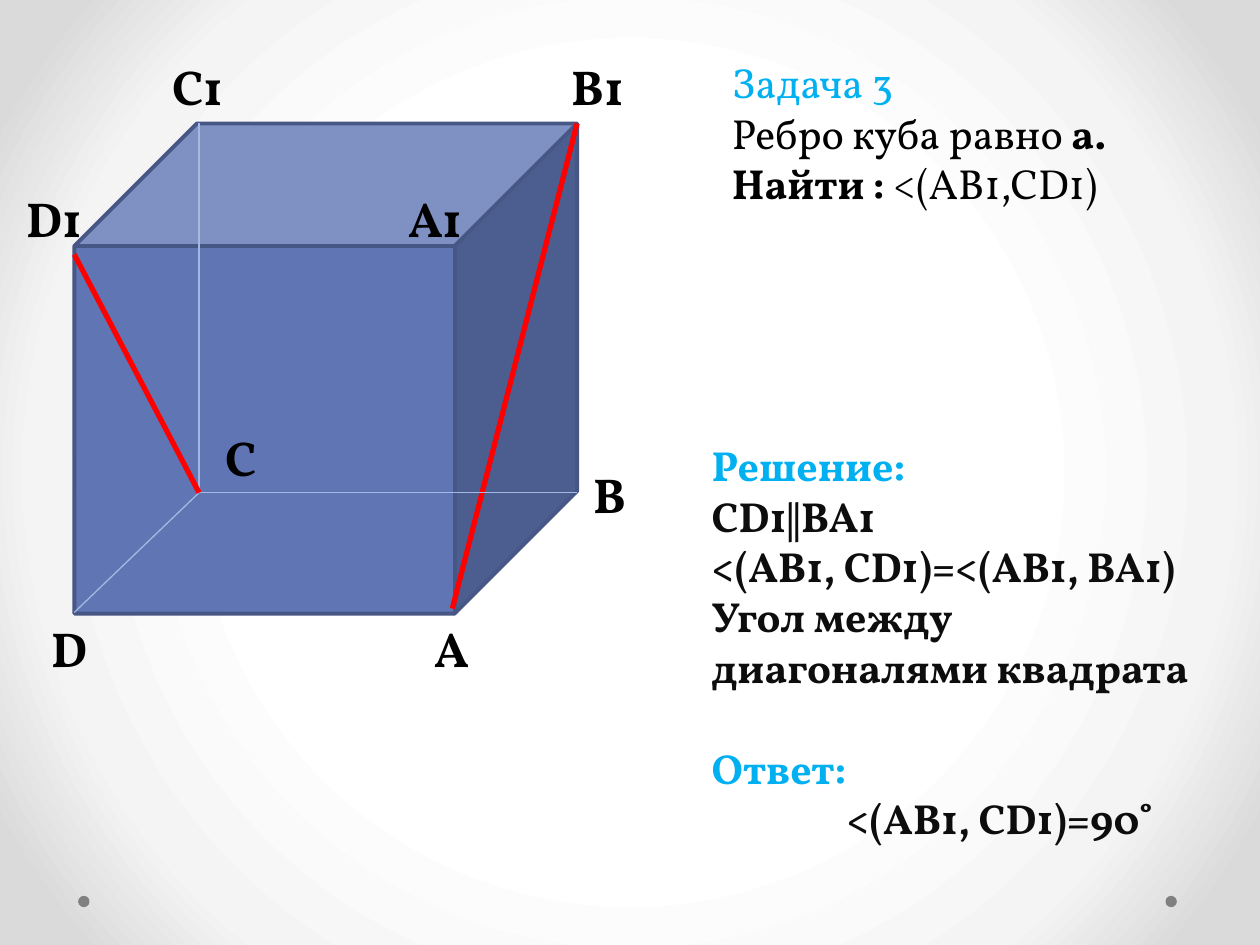
import pptx
import pptx.util
import pptx.dml.color
import pptx.enum.shapes
import pptx.enum.text
import pptx.oxml
import pptx.oxml.ns

THEME = dict(font="Vollkorn", label=28, body=24, black="000000", ink="0D0D0D",
             accent="00B0F0", cube="6076B4", edge="475785", hidden="A0BAE1",
             diagonal="FF0000", dot="808080", thin=0.75, outline=2.25, thick=3,
             stops=[(50, "FFFFFF"), (76, "F4F4F4"), (92, "DADADA")])
COLS, ROWS = 100, 75
CUBE = (5.9, 9.8, 39.9, 38.9)
DOTS = [(6.2, 71.1), (92.5, 71.1)]
DOT_SIZE = 0.9
LABEL_H = 5.7
TOP, UPPER, BOTTOM = 4, 14.5, 48.6
LABELS = [("A", 33.5, BOTTOM, 5.5), ("A1", 31.4, UPPER, 9),
          ("B", 46.1, 36.4, 4.7), ("B1", 44.4, TOP, 8.1),
          ("C", 16.9, 33.4, 5.5), ("C1", 12.7, TOP, 6.8),
          ("D", 3.1, BOTTOM, 5.5), ("D1", 1.1, UPPER, 7.5)]
POINTS = {"A": (35.9, 48.3), "B": (45.8, 39.1), "B1": (45.8, 9.8),
          "C": (15.8, 39.1), "C1": (15.8, 9.8), "D": (5.9, 48.6), "D1": (5.9, 20.2)}
LINES = [("B1", "A", "diagonal", "thick"), ("C1", "C", "hidden", "thin"),
         ("B", "C", "hidden", "thin"), ("C", "D", "hidden", "thin"),
         ("C", "D1", "diagonal", "thick")]
TASK = [
    dict(runs=[("Задача 3", "accent", False)]),
    dict(runs=[("Ребро куба равно ", "black", False), ("а.", "black", True)]),
    dict(runs=[("Найти :", "black", True), (" <(АВ1,СD1)", "black", False)]),
]
SOLUTION = [
    dict(runs=[("Решение:", "accent", True)]),
    dict(runs=[("CD1‖BA1", "ink", True)]),
    dict(runs=[("<(AB1, CD1)=<(AB1, BA1)", "ink", True)]),
    dict(runs=[("Угол между диагоналями квадрата", "ink", True)]),
    dict(runs=[("Ответ:", "accent", True)], before=28.8),
    dict(runs=[("<(AB1, CD1)=90˚", "ink", True)], indent=10.7),
]

prs = pptx.Presentation()
prs.slide_width, prs.slide_height = pptx.util.Inches(10), pptx.util.Inches(7.5)
s = prs.slides.add_slide(prs.slide_layouts[6])


def grid(*cells):
    sides = ((prs.slide_width, COLS), (prs.slide_height, ROWS))
    return [round(c * sides[i % 2][0] / sides[i % 2][1]) for i, c in enumerate(cells)]


def rgb(name):
    return pptx.dml.color.RGBColor.from_string(THEME[name])


def assign(target, values):
    for name, value in values.items():
        setattr(target, name, value)


def add_background():
    s.background.fill.gradient()
    old = s.background.fill._xPr.find(pptx.oxml.ns.qn("a:gradFill"))
    stops = "".join(f'<a:gs pos="{pos * 1000}"><a:srgbClr val="{color}"/></a:gs>'
                    for pos, color in THEME["stops"])
    new = pptx.oxml.parse_xml(
        f'<a:gradFill {pptx.oxml.ns.nsdecls("a")} rotWithShape="1"><a:gsLst>{stops}</a:gsLst>'
        '<a:path path="circle"><a:fillToRect l="50000" t="50000" r="50000" b="50000"/>'
        '</a:path></a:gradFill>')
    old.getparent().replace(old, new)


def add_solid(kind, box, fill, edge=None):
    sp = s.shapes.add_shape(kind, *grid(*box))
    sp.shadow.inherit = False
    sp.fill.solid()
    sp.fill.fore_color.rgb = rgb(fill)
    if edge:
        sp.line.color.rgb = rgb(edge)
        sp.line.width = pptx.util.Pt(THEME["outline"])
    else:
        sp.line.fill.background()


def add_text(box, paragraphs, size):
    tf = s.shapes.add_textbox(*grid(*box)).text_frame
    assign(tf, dict(word_wrap=True, auto_size=pptx.enum.text.MSO_AUTO_SIZE.SHAPE_TO_FIT_TEXT))
    for i, item in enumerate(paragraphs):
        p = tf.add_paragraph() if i else tf.paragraphs[0]
        if "before" in item:
            p.space_before = pptx.util.Pt(item["before"])
        if "indent" in item:
            p._p.get_or_add_pPr().set("marL", str(grid(item["indent"])[0]))
        for text, color, bold in item["runs"]:
            r = p.add_run()
            r.text = text
            assign(r.font, dict(name=THEME["font"], size=pptx.util.Pt(THEME[size]), bold=bold))
            r.font.color.rgb = rgb(color)


def add_line(start, end, color, width):
    line = s.shapes.add_connector(pptx.enum.shapes.MSO_CONNECTOR.STRAIGHT,
                                  *grid(*POINTS[start], *POINTS[end]))
    line.line.color.rgb = rgb(color)
    line.line.width = pptx.util.Pt(THEME[width])
    line._element.spPr.append(pptx.oxml.parse_xml(
        f'<a:effectLst {pptx.oxml.ns.nsdecls("a")}/>'))


add_background()
for x, y in DOTS:
    add_solid(pptx.enum.shapes.MSO_SHAPE.OVAL, (x, y, DOT_SIZE, DOT_SIZE), "dot")
add_solid(pptx.enum.shapes.MSO_SHAPE.CUBE, CUBE, "cube", "edge")
for text, x, y, width in LABELS:
    add_text((x, y, width, LABEL_H), [dict(runs=[(text, "black", True)])], "label")
add_text((57.1, TOP, 36.9, 13.1), TASK, "body")
add_text((55.5, 34.4, 42.5, 33.3), SOLUTION, "body")
for line in LINES:
    add_line(*line)
prs.save("out.pptx")
